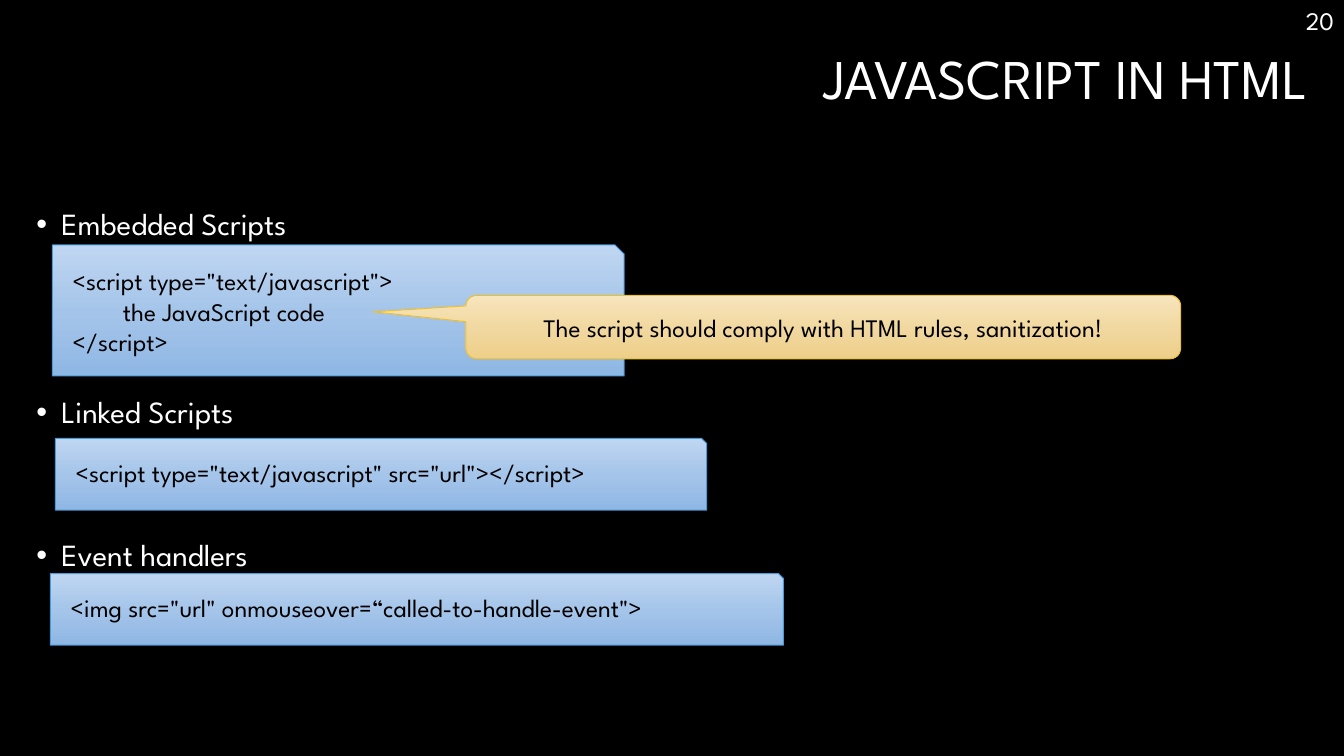
from copy import deepcopy
from dataclasses import dataclass

from pptx import Presentation
from pptx.dml.color import RGBColor
from pptx.enum.shapes import MSO_SHAPE
from pptx.enum.text import MSO_ANCHOR, MSO_AUTO_SIZE, PP_ALIGN
from pptx.oxml.ns import qn
from pptx.shapes.autoshape import Shape
from pptx.text.text import TextFrame
from pptx.util import Inches, Pt

SNIPPED, CALLOUT = MSO_SHAPE.SNIP_1_RECTANGLE, MSO_SHAPE.ROUNDED_RECTANGULAR_CALLOUT
TOP, MIDDLE = MSO_ANCHOR.TOP, MSO_ANCHOR.MIDDLE
LEFT, CENTER, RIGHT = PP_ALIGN.LEFT, PP_ALIGN.CENTER, PP_ALIGN.RIGHT
NO_AUTOFIT = MSO_AUTO_SIZE.NONE

BLACK = RGBColor(0x00, 0x00, 0x00)
WHITE = RGBColor(0xFF, 0xFF, 0xFF)
BLUE_LINE = RGBColor(0x4A, 0x9B, 0xDC)
BLUES = (RGBColor(0xBF, 0xD6, 0xF2), RGBColor(0xA4, 0xC4, 0xE9), RGBColor(0x8F, 0xB7, 0xE4))
GOLD_LINE = RGBColor(0xE9, 0xBF, 0x35)
GOLDS = (RGBColor(0xF8, 0xE5, 0xBD), RGBColor(0xF1, 0xD8, 0xA0), RGBColor(0xEE, 0xCF, 0x89))
STOP_POSITIONS = (0, 0.52, 1)

FONT = "League Spartan"
CELL = 0.1  # inches per grid column and row


@dataclass(frozen=True)
class Area:
    """A rectangle counted in grid columns and rows."""
    column: float
    row: float
    columns: float
    rows: float

    def lengths(self) -> list[int]:
        cells = (self.column, self.row, self.columns, self.rows)
        return [Inches(CELL * count) for count in cells]


@dataclass(frozen=True)
class BoxStyle:
    preset: MSO_SHAPE
    adjustments: tuple[float, ...]
    gradient: tuple[RGBColor, ...]
    line: RGBColor
    align: PP_ALIGN
    anchor: MSO_ANCHOR
    margins: tuple[float, float, float, float]


@dataclass(frozen=True)
class TextBox:
    area: Area
    style: BoxStyle
    text: str


@dataclass(frozen=True)
class Bullet:
    text: str
    space_before: float


CODE = BoxStyle(SNIPPED, (0.07,), BLUES, BLUE_LINE, LEFT, TOP, (0.2, 0.16, 0.2, 0.2))
NOTE = BoxStyle(CALLOUT, (-0.63, -0.24, 0.17), GOLDS, GOLD_LINE, CENTER, MIDDLE,
                (0.1, 0.05, 0.1, 0.05))

TITLE_AREA = Area(2.6, 4.6, 128.1, 14.1)
BODY_AREA = Area(2.6, 20.2, 128.1, 50.3)
NUMBER_AREA = Area(104.5, 0, 28.8, 4)

BULLETS = (
    Bullet("Embedded Scripts", 10),
    Bullet("Linked Scripts", 111),
    Bullet("Event handlers", 78),
)
BOXES = (
    TextBox(Area(5.2, 24.3, 56.7, 13), CODE,
            '<script type="text/javascript">\n\tthe JavaScript code\n</script>'),
    TextBox(Area(5.5, 43.5, 64.6, 7.1), CODE,
            '<script type="text/javascript" src="url"></script>'),
    TextBox(Area(5, 56.9, 72.7, 7.1), CODE,
            '<img src="url" onmouseover=“called-to-handle-event">'),
    TextBox(Area(46.2, 29.3, 70.9, 6.3), NOTE,
            "The script should comply with HTML rules, sanitization!"),
)


def set_values(target: object, values: dict[str, object]) -> None:
    for name, value in values.items():
        setattr(target, name, value)


def place(shape: Shape, area: Area) -> None:
    set_values(shape, dict(zip(("left", "top", "width", "height"), area.lengths())))


def format_text(frame: TextFrame, size: float, color: RGBColor,
                align: PP_ALIGN, anchor: MSO_ANCHOR, spacing: float = 1.0) -> None:
    set_values(frame, {"word_wrap": True, "auto_size": NO_AUTOFIT, "vertical_anchor": anchor})
    for para in frame.paragraphs:
        set_values(para, {"alignment": align, "line_spacing": spacing})
        for span in para.runs:
            set_values(span.font, {"name": FONT, "size": Pt(size)})
            span.font.color.rgb = color


def fill_gradient(shape: Shape, colors: tuple[RGBColor, ...]) -> None:
    """Fill from top to bottom, with a third stop added to the default two."""
    shape.fill.gradient()
    shape.fill.gradient_angle = 270
    stop_list = shape.fill._xPr.find(qn("a:gradFill")).find(qn("a:gsLst"))
    stop_list.append(deepcopy(stop_list[0]))
    for stop, color, position in zip(shape.fill.gradient_stops, colors, STOP_POSITIONS):
        stop.color.rgb = color
        stop.position = position


def add_box(page, box: TextBox) -> None:
    style = box.style
    shape = page.shapes.add_shape(style.preset, *box.area.lengths())
    shape.shadow.inherit = False
    for index, value in enumerate(style.adjustments):
        shape.adjustments[index] = value
    fill_gradient(shape, style.gradient)
    shape.line.color.rgb = style.line
    shape.line.width = Pt(0.75)
    frame = shape.text_frame
    frame.text = box.text
    sides = ("margin_left", "margin_top", "margin_right", "margin_bottom")
    set_values(frame, dict(zip(sides, map(Inches, style.margins))))
    format_text(frame, 18, BLACK, style.align, style.anchor)


def add_bullets(body: Shape) -> None:
    place(body, BODY_AREA)
    frame = body.text_frame
    frame.text = "\n".join(bullet.text for bullet in BULLETS)
    format_text(frame, 22, WHITE, LEFT, TOP, 0.9)
    for para, bullet in zip(frame.paragraphs, BULLETS):
        para.space_before = Pt(bullet.space_before)
        properties = para._p.get_or_add_pPr()
        properties.set("marL", str(Inches(0.25)))
        properties.set("indent", str(-Inches(0.25)))


def main() -> None:
    deck = Presentation()
    set_values(deck, {"slide_width": Inches(13.33), "slide_height": Inches(7.5)})
    page = deck.slides.add_slide(deck.slide_layouts[1])
    page.background.fill.solid()
    page.background.fill.fore_color.rgb = BLACK

    title = page.shapes.title
    place(title, TITLE_AREA)
    title.text_frame.text = "JAVASCRIPT IN HTML"
    format_text(title.text_frame, 40, WHITE, RIGHT, TOP, 0.9)

    add_bullets(page.placeholders[1])

    number = page.shapes.add_textbox(*NUMBER_AREA.lengths())
    number.text_frame.text = "20"
    format_text(number.text_frame, 18, WHITE, RIGHT, TOP)

    for box in BOXES:
        add_box(page, box)
    deck.save("out.pptx")


if __name__ == "__main__":
    main()
